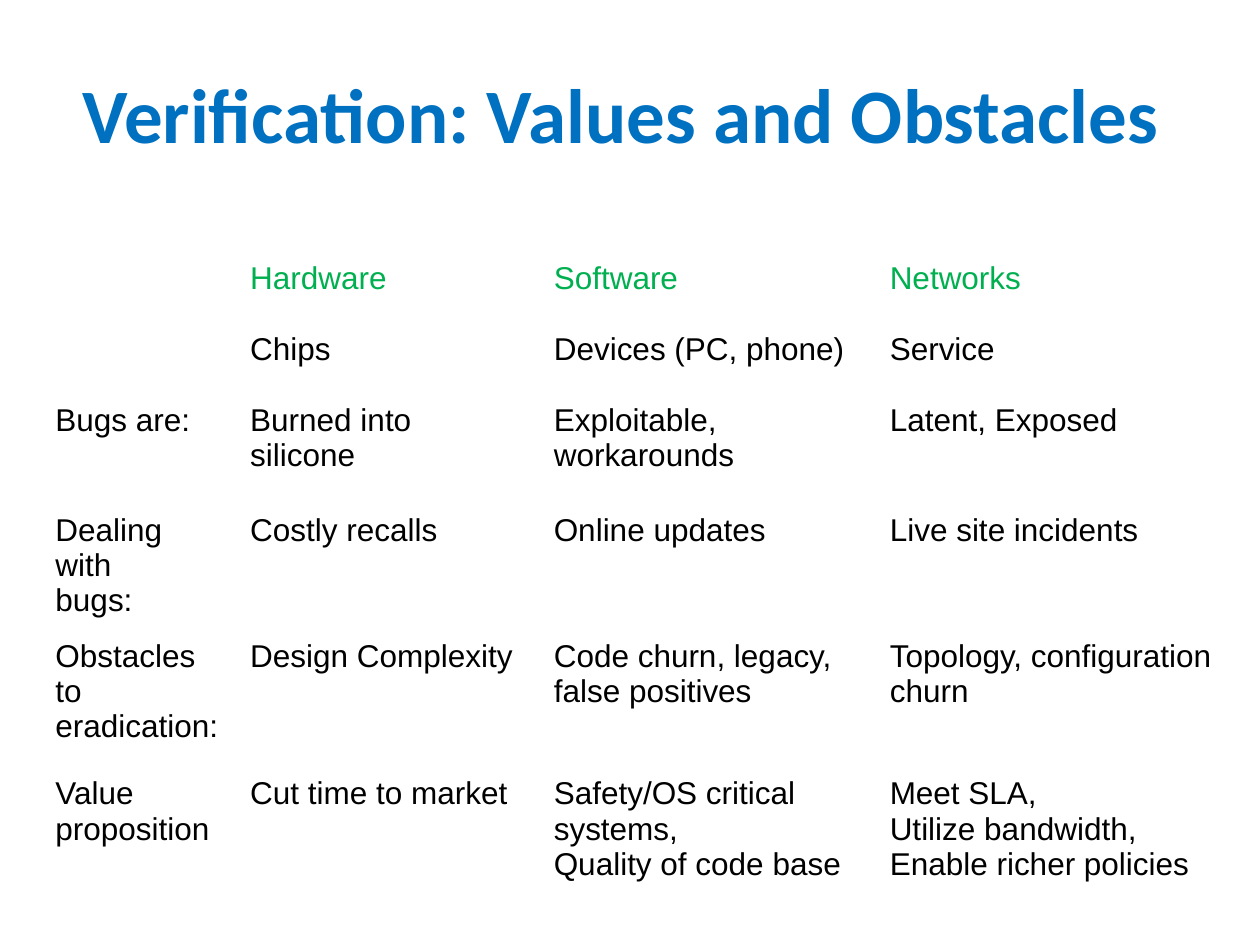
from pptx import Presentation
from pptx.dml.color import RGBColor
from pptx.enum import text as t
from pptx.util import Pt

COLORS = {"title": "0070C0", "heading": "00B050", "body": "000000"}


def write(frame, content, size=18, font="Arial", color="body", bold=False,
          align=t.PP_ALIGN.LEFT):
    """Newlines start paragraphs; vertical tabs break lines."""
    frame.word_wrap = True
    frame.text = content
    for paragraph in frame.paragraphs:
        paragraph.alignment = align
        paragraph.font.size = Pt(size)
        for run in paragraph.runs:
            run.font.size = Pt(size)
            run.font.name = font
            run.font.bold = bold
            run.font.color.rgb = RGBColor.from_string(COLORS[color])


deck = Presentation()
deck.slide_width, deck.slide_height = Pt(720), Pt(540)
slide = deck.slides.add_slide(deck.slide_layouts[6])

# Title
title = slide.shapes.add_textbox(Pt(31), Pt(19.5), Pt(648), Pt(90)).text_frame
title.vertical_anchor = t.MSO_ANCHOR.MIDDLE
write(title, "Verification: Values and Obstacles", size=44, font="Calibri",
      color="title", bold=True, align=t.PP_ALIGN.CENTER)

# Comparison of the three fields
comparison = [
    ["", "Hardware", "Software", "Networks"],
    ["", "Chips", "Devices (PC, phone)", "Service"],
    ["Bugs are:", "Burned into\vsilicone", "Exploitable,\vworkarounds",
     "Latent, Exposed"],
    ["Dealing with\vbugs:", "Costly recalls", "Online updates",
     "Live site incidents"],
    ["Obstacles to eradication:", "Design Complexity",
     "Code churn, legacy, false positives", "Topology, configuration churn"],
    ["Value proposition", "Cut time to market",
     "Safety/OS critical systems,\nQuality of code base",
     "Meet SLA,\nUtilize bandwidth,\nEnable richer policies"],
]
column_widths = [111.3, 173.5, 192, 211.5]
row_heights = [40.5, 40.5, 63, 57.5, 78.5, 106.5]

table = slide.shapes.add_table(
    len(row_heights), len(column_widths), Pt(24.5), Pt(145.5),
    Pt(sum(column_widths)), Pt(sum(row_heights))).table
table.first_row = False
table.horz_banding = False
for column, width in zip(table.columns, column_widths):
    column.width = Pt(width)

for row_index, (row, height) in enumerate(zip(table.rows, row_heights)):
    row.height = Pt(height)
    for cell, content in zip(row.cells, comparison[row_index]):
        cell.fill.background()
        write(cell.text_frame, content,
              color="heading" if row_index == 0 else "body")

deck.save("out.pptx")
